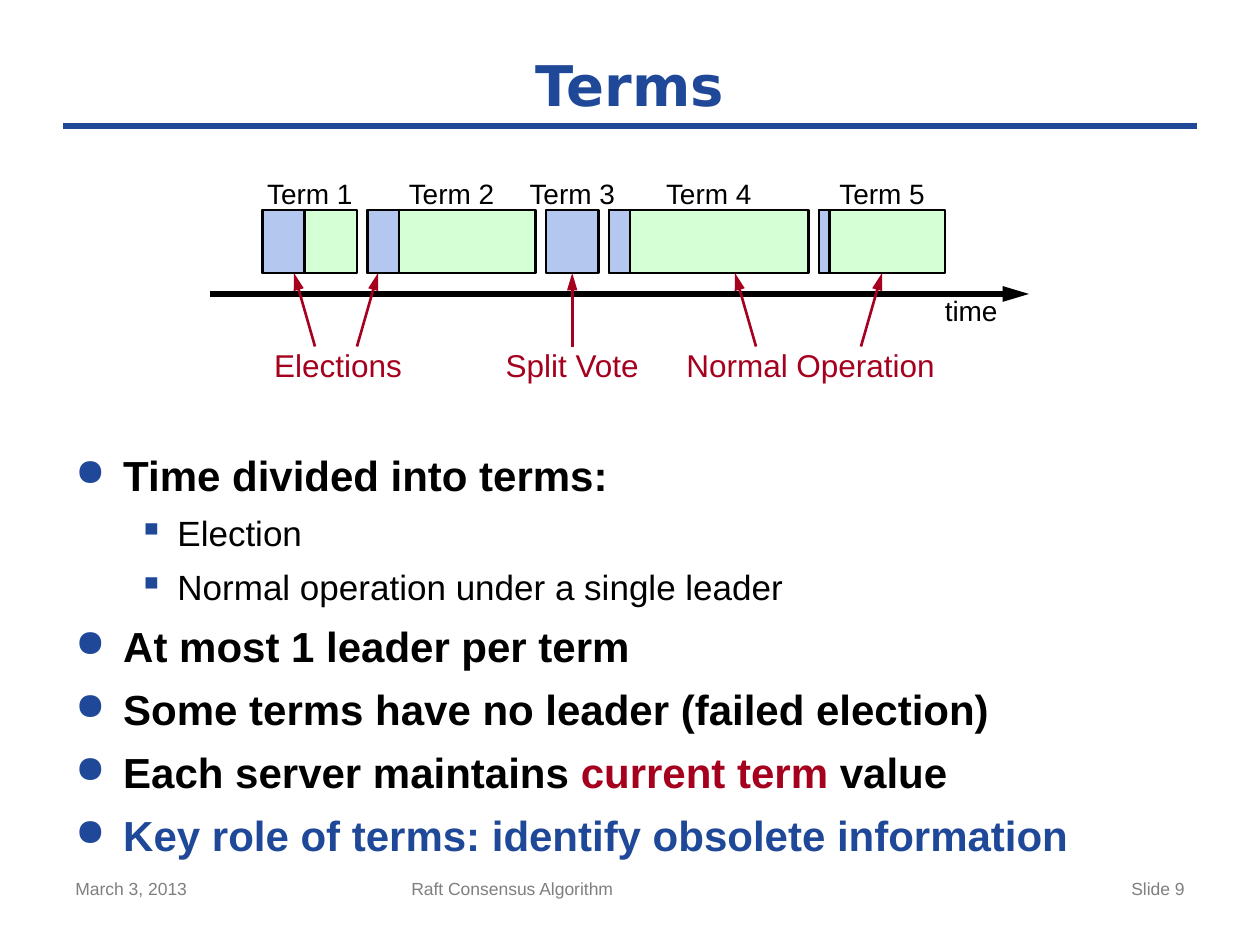
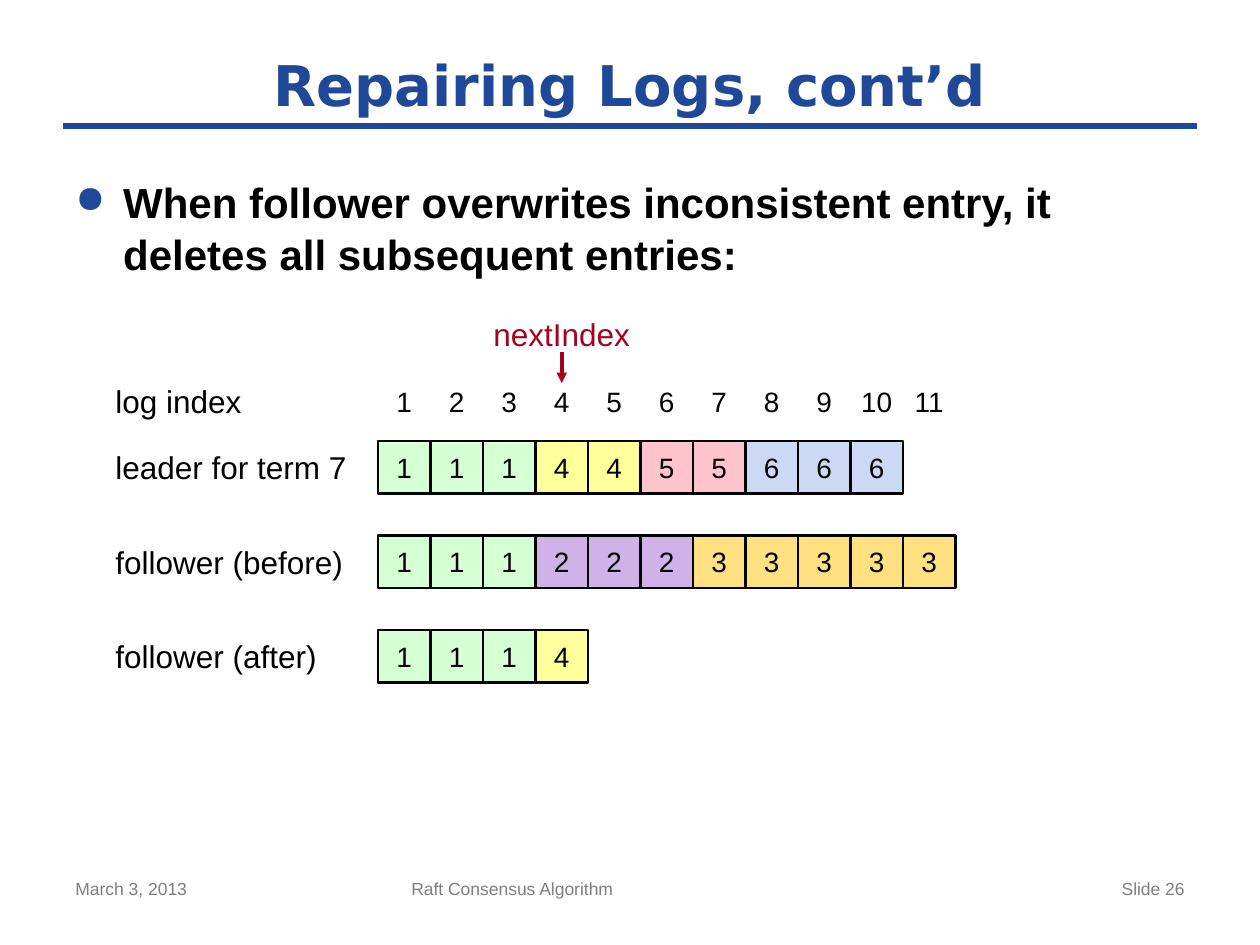
from lxml import etree
from pptx import Presentation
from pptx import util as u
from pptx.dml.color import RGBColor
from pptx.enum import shapes, text
from pptx.oxml.ns import qn

BLUE = RGBColor(0x1F, 0x48, 0x99)
RED = RGBColor(0xA5, 0x00, 0x1E)
BLACK = RGBColor(0, 0, 0)
GRAY = RGBColor(0x7F, 0x7F, 0x7F)
GREEN = RGBColor(0xD5, 0xFF, 0xD5)
ELECTION_BLUE = RGBColor(0xB3, 0xC7, 0xEF)
TERM_COLORS = {
    1: GREEN,
    2: RGBColor(0xD1, 0xB2, 0xE8),
    3: RGBColor(0xFF, 0xE1, 0x81),
    4: RGBColor(0xFF, 0xFF, 0x9B),
    5: RGBColor(0xFF, 0xC3, 0xCE),
    6: RGBColor(0xCC, 0xD9, 0xF4),
}
FONT, TITLE_FONT = "Arial", "DejaVu Sans"
LEFT, CENTER, RIGHT = text.PP_ALIGN.LEFT, text.PP_ALIGN.CENTER, text.PP_ALIGN.RIGHT

# Character, size in percent, left indent, hanging indent, text size, bold
BULLETS = [("●", 90, 0.38, 0.38, 24, True), ("▪", 100, 0.81, 0.31, 20, False)]


def grid(*cells):
    return [u.Inches(cell / 12) for cell in cells]


def style(paragraph, size, color=BLACK, bold=False, align=LEFT, font=FONT):
    paragraph.alignment = align
    for run in paragraph.runs:
        run.font.name = font
        run.font.size = u.Pt(size)
        run.font.bold = bold
        run.font.color.rgb = color


def clear_margins(frame):
    frame.margin_left = frame.margin_right = frame.margin_top = frame.margin_bottom = 0
    frame.vertical_anchor = text.MSO_ANCHOR.MIDDLE


def add_label(slide, wording, left, middle, width, size, color=BLACK, align=CENTER):
    height = 3.6
    frame = slide.shapes.add_textbox(*grid(left, middle - height / 2, width, height)).text_frame
    clear_margins(frame)
    frame.word_wrap = True
    frame.text = wording
    style(frame.paragraphs[0], size, color, align=align)


def add_centered_label(slide, wording, center, middle, size, color=BLACK, width=30):
    add_label(slide, wording, center - width / 2, middle, width, size, color)


def add_box(slide, left, top, width, height, fill, wording=""):
    box = slide.shapes.add_shape(
        shapes.MSO_SHAPE.RECTANGLE, *grid(left, top, width, height))
    box.shadow.inherit = False
    box.fill.solid()
    box.fill.fore_color.rgb = fill
    box.line.color.rgb = BLACK
    box.line.width = u.Pt(1.5)
    if wording:
        clear_margins(box.text_frame)
        box.text_frame.text = wording
        style(box.text_frame.paragraphs[0], 16, align=CENTER)


def add_line(slide, start, end, color, width, head_length=None):
    line = slide.shapes.add_connector(
        shapes.MSO_CONNECTOR.STRAIGHT, *grid(*start, *end))
    line.line.color.rgb = color
    line.line.width = u.Pt(width)
    if head_length:
        etree.SubElement(line.line._get_or_add_ln(), qn("a:tailEnd"),
                         type="triangle", w="med", len=head_length)
    etree.SubElement(line._element.spPr, qn("a:effectLst"))


def add_bullet_mark(paragraph, level):
    mark, percent, indent, hanging = BULLETS[level][:4]
    props = paragraph._p.get_or_add_pPr()
    props.set("marL", str(u.Inches(indent)))
    props.set("indent", str(-u.Inches(hanging)))
    color = etree.SubElement(props, qn("a:buClr"))
    etree.SubElement(color, qn("a:srgbClr"), val=str(BLUE))
    etree.SubElement(props, qn("a:buSzPct"), val=str(percent * 1000))
    etree.SubElement(props, qn("a:buChar"), char=mark)


def add_bullets(slide, top, height, bullets):
    frame = slide.shapes.add_textbox(*grid(6, top, 108, height)).text_frame
    frame.word_wrap = True
    for number, (level, parts) in enumerate(bullets):
        paragraph = frame.add_paragraph() if number else frame.paragraphs[0]
        paragraph.level = level
        paragraph.line_spacing = 1.04
        paragraph.space_before = u.Pt(6 if number else 0)
        for wording, _ in parts:
            paragraph.add_run().text = wording
        size, bold = BULLETS[level][4:]
        style(paragraph, size, bold=bold)
        for run, (_, color) in zip(paragraph.runs, parts):
            run.font.color.rgb = color
        add_bullet_mark(paragraph, level)


def add_footer(slide, number):
    for wording, left, width, align in [
        ("March 3, 2013", 6, 28, LEFT),
        ("Raft Consensus Algorithm", 38, 45, LEFT),
        (f"Slide {number}", 86, 28, RIGHT),
    ]:
        frame = slide.shapes.add_textbox(*grid(left, 83, width, 5)).text_frame
        frame.word_wrap = True
        frame.text = wording
        style(frame.paragraphs[0], 10, GRAY, align=align)


def add_titled_slide(deck, heading, number):
    slide = deck.slides.add_slide(deck.slide_layouts[5])
    title = slide.shapes.title
    title.left, title.top, title.width, title.height = grid(6, 4, 108, 8)
    title.text_frame.text = heading
    title.text_frame.auto_size = text.MSO_AUTO_SIZE.NONE
    title.text_frame.vertical_anchor = text.MSO_ANCHOR.MIDDLE
    style(title.text_frame.paragraphs[0], 32, BLUE, True, CENTER, TITLE_FONT)
    add_line(slide, (6, 12), (114, 12), BLUE, 4)
    add_footer(slide, number)
    return slide


def add_timeline(slide):
    top, height, gap = 20, 6, 1
    bottom, callout_top = top + height, 33
    add_line(slide, (20, 28), (98, 28), BLACK, 3, "lg")
    add_centered_label(slide, "time", 92.5, 29.6, 16)

    start = 25
    terms = [(4, 9), (3, 16), (5, 5), (2, 19), (1, 12)]
    for number, (election, duration) in enumerate(terms, 1):
        if duration > election:
            add_box(slide, start, top, duration, height, GREEN)
        add_box(slide, start, top, election, height, ELECTION_BLUE)
        add_centered_label(slide, f"Term {number}", start + duration / 2, 18.4, 16, width=9)
        start += duration + gap

    for wording, center, pointers in [
        ("Elections", 32.2, [(30, 28), (34, 36)]),
        ("Split Vote", 54.5, [(54.5, 54.5)]),
        ("Normal Operation", 77.2, [(72, 70), (82, 84)]),
    ]:
        add_centered_label(slide, wording, center, 34.8, 18, RED)
        for origin, target in pointers:
            add_line(slide, (origin, callout_top), (target, bottom), RED, 1.5, "lg")


def add_logs(slide):
    first_column, cell, first_row, pitch = 36, 5, 42, 9
    label_left, label_width, index_middle, next_index = 11, 24, 38.2, 4

    def column_center(index):
        return first_column + (index - 0.5) * cell

    add_label(slide, "log index", label_left, index_middle, label_width, 18, align=LEFT)
    for index in range(1, 12):
        add_centered_label(slide, str(index), column_center(index), index_middle, 16, width=cell)

    center = column_center(next_index)
    add_centered_label(slide, "nextIndex", center, 31.8, 18, RED)
    add_line(slide, (center, 33.5), (center, 36.5), RED, 2, "med")

    logs = [
        ("leader for term 7", [1, 1, 1, 4, 4, 5, 5, 6, 6, 6]),
        ("follower (before)", [1, 1, 1, 2, 2, 2, 3, 3, 3, 3, 3]),
        ("follower (after)", [1, 1, 1, 4]),
    ]
    for row, (owner, entries) in enumerate(logs):
        top = first_row + row * pitch
        add_label(slide, owner, label_left, top + cell / 2, label_width, 18, align=LEFT)
        for column, term in enumerate(entries):
            add_box(slide, first_column + column * cell, top, cell, cell,
                    TERM_COLORS[term], str(term))


def main():
    deck = Presentation()
    deck.slide_width, deck.slide_height = u.Inches(10), u.Inches(7.5)

    terms = add_titled_slide(deck, "Terms", 9)
    add_timeline(terms)
    add_bullets(terms, 42, 38.4, [
        (0, [("Time divided into terms:", BLACK)]),
        (1, [("Election", BLACK)]),
        (1, [("Normal operation under a single leader", BLACK)]),
        (0, [("At most 1 leader per term", BLACK)]),
        (0, [("Some terms have no leader (failed election)", BLACK)]),
        (0, [("Each server maintains ", BLACK), ("current term ", RED), ("value", BLACK)]),
        (0, [("Key role of terms: identify obsolete information", BLUE)]),
    ])

    repairing = add_titled_slide(deck, "Repairing Logs, cont’d", 26)
    add_bullets(repairing, 16, 12, [
        (0, [("When follower overwrites inconsistent entry, it "
              "deletes all subsequent entries:", BLACK)]),
    ])
    add_logs(repairing)

    deck.save("out.pptx")


if __name__ == "__main__":
    main()
